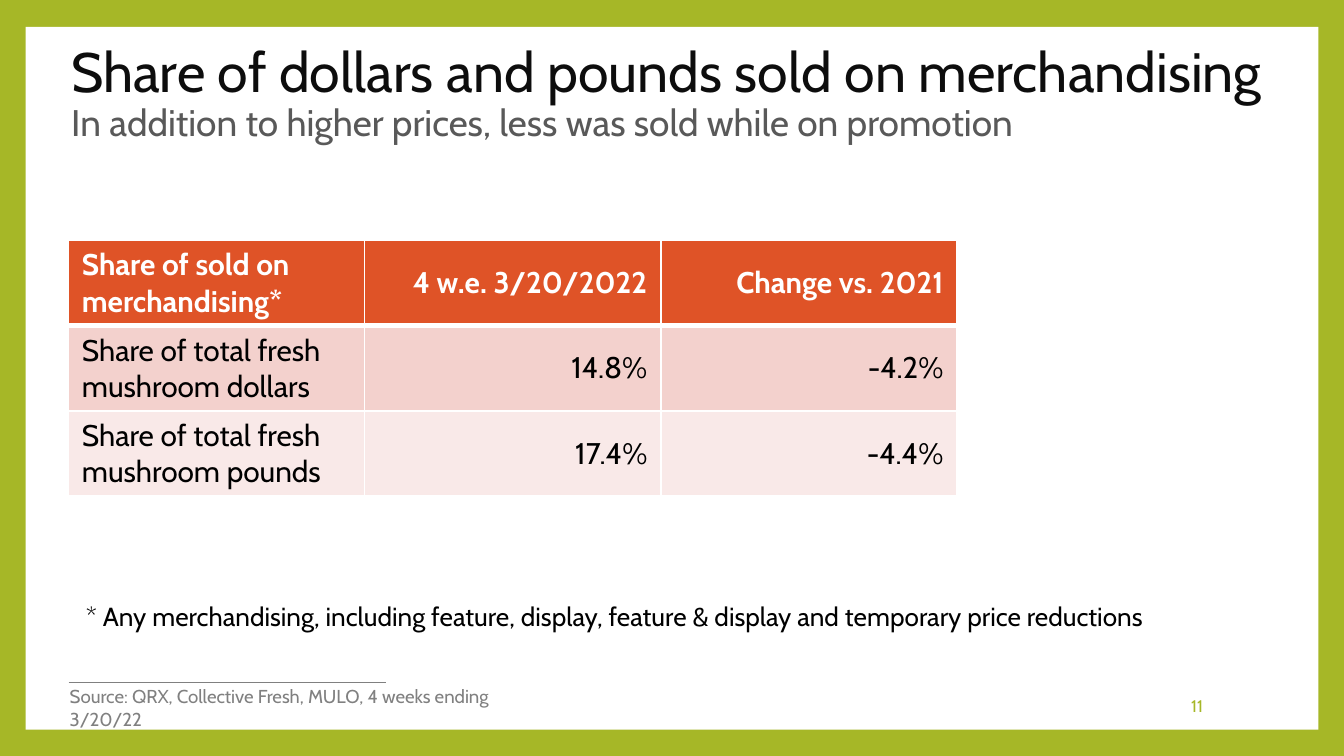
import pptx
import pptx.util
import pptx.dml.color
import pptx.enum.shapes
import pptx.enum.text
import pptx.oxml
import pptx.oxml.ns
from pptx.util import Inches

FONT = "Cabin"
GREEN = "A6B727"
GRAY = "808080"
WHITE = "FFFFFF"
BLACK = "000000"
LEFT = pptx.enum.text.PP_ALIGN.LEFT
RIGHT = pptx.enum.text.PP_ALIGN.RIGHT
MIDDLE = pptx.enum.text.MSO_ANCHOR.MIDDLE
TOP = pptx.enum.text.MSO_ANCHOR.TOP

TABLE_ROWS = [
    ("Share of sold on merchandising*", "4 w.e. 3/20/2022", "Change vs. 2021"),
    ("Share of total fresh mushroom dollars", "14.8%", "-4.2%"),
    ("Share of total fresh mushroom pounds", "17.4%", "-4.4%"),
]
ROW_FILLS = ["DF5327", "F3D1CD", "F9E9E8"]


def color(value):
    return pptx.dml.color.RGBColor.from_string(value)


def paint(target, value):
    target.fill.solid()
    target.fill.fore_color.rgb = color(value)


def add_span(para, text, size, value, bold=False):
    span = para.add_run()
    span.text = text
    span.font.name = FONT
    span.font.size = pptx.util.Pt(size)
    span.font.bold = bold
    span.font.color.rgb = color(value)


def add_panel(page):
    panel = page.shapes.add_shape(
        pptx.enum.shapes.MSO_SHAPE.RECTANGLE,
        Inches(0.19), Inches(0.2), Inches(9.62), Inches(5.23))
    panel.shadow.inherit = False
    paint(panel, WHITE)
    panel.line.fill.background()
    page.shapes._spTree.insert(2, panel._element)


def add_source_rule(page):
    rule = page.shapes.add_connector(
        pptx.enum.shapes.MSO_CONNECTOR.STRAIGHT,
        Inches(0.51), Inches(5.08), Inches(2.87), Inches(5.08))
    rule.line.color.rgb = color(GRAY)
    rule.line.width = pptx.util.Pt(0.79)
    rule._element.spPr.append(
        pptx.oxml.parse_xml(f'<a:effectLst {pptx.oxml.ns.nsdecls("a")}/>'))


def fill_title(page):
    title = page.shapes.title
    title.left, title.top = Inches(0.43), Inches(0.31)
    title.width, title.height = Inches(9.29), Inches(0.79)
    frame = title.text_frame
    frame.word_wrap = True
    frame.auto_size = pptx.enum.text.MSO_AUTO_SIZE.NONE
    frame.vertical_anchor = MIDDLE
    para = frame.paragraphs[0]
    para.alignment = LEFT
    para.line_spacing = 0.9
    add_span(para, "Share of dollars and pounds sold on merchandising", 29.7, "0D0D0D")
    para.add_line_break()
    add_span(para, "In addition to higher prices, less was sold while on promotion", 19.8, "595959")


def add_text(page, text, left, top, width, height, size, value, align=LEFT, anchor=TOP):
    box = page.shapes.add_textbox(Inches(left), Inches(top), Inches(width), Inches(height))
    frame = box.text_frame
    frame.word_wrap = True
    frame.vertical_anchor = anchor
    para = frame.paragraphs[0]
    para.alignment = align
    add_span(para, text, size, value)


def set_borders(cell, top, bottom):
    widths = {"lnL": 1, "lnR": 1, "lnT": top, "lnB": bottom}
    properties = cell._tc.get_or_add_tcPr()
    for index, (tag, width) in enumerate(widths.items()):
        properties.insert(index, pptx.oxml.parse_xml(
            f'<a:{tag} {pptx.oxml.ns.nsdecls("a")} w="{pptx.util.Pt(width)}">'
            f'<a:solidFill><a:srgbClr val="{WHITE}"/></a:solidFill></a:{tag}>'))


def add_share_table(page):
    table = page.shapes.add_table(
        3, 3, Inches(0.51), Inches(1.79), Inches(6.61), Inches(1.9)).table
    for row_index, (texts, fill) in enumerate(zip(TABLE_ROWS, ROW_FILLS)):
        header = row_index == 0
        for column_index, text in enumerate(texts):
            cell = table.cell(row_index, column_index)
            paint(cell, fill)
            set_borders(cell, 3 if row_index == 1 else 1, 3 if header else 1)
            cell.vertical_anchor = MIDDLE
            para = cell.text_frame.paragraphs[0]
            para.alignment = RIGHT if column_index else LEFT
            add_span(para, text, 16, WHITE if header else BLACK, header)


def main():
    deck = pptx.Presentation()
    deck.slide_width = Inches(10)
    deck.slide_height = deck.slide_width * 9 // 16
    page = deck.slides.add_slide(deck.slide_layouts[5])
    paint(page.background, GREEN)
    add_panel(page)
    add_source_rule(page)
    fill_title(page)
    add_text(page, "11", 7.65, 5.1, 1.4, 0.3, 9, GREEN, RIGHT, MIDDLE)
    add_text(page, "Source: QRX, Collective Fresh, MULO, 4 weeks ending 3/20/22",
             0.42, 5.05, 3.71, 0.27, 10, GRAY)
    add_share_table(page)
    add_text(page, "* Any merchandising, including feature, display, feature & display "
             "and temporary price reductions", 0.54, 4.42, 8.1, 0.34, 14, BLACK)
    deck.save("out.pptx")


if __name__ == "__main__":
    main()
